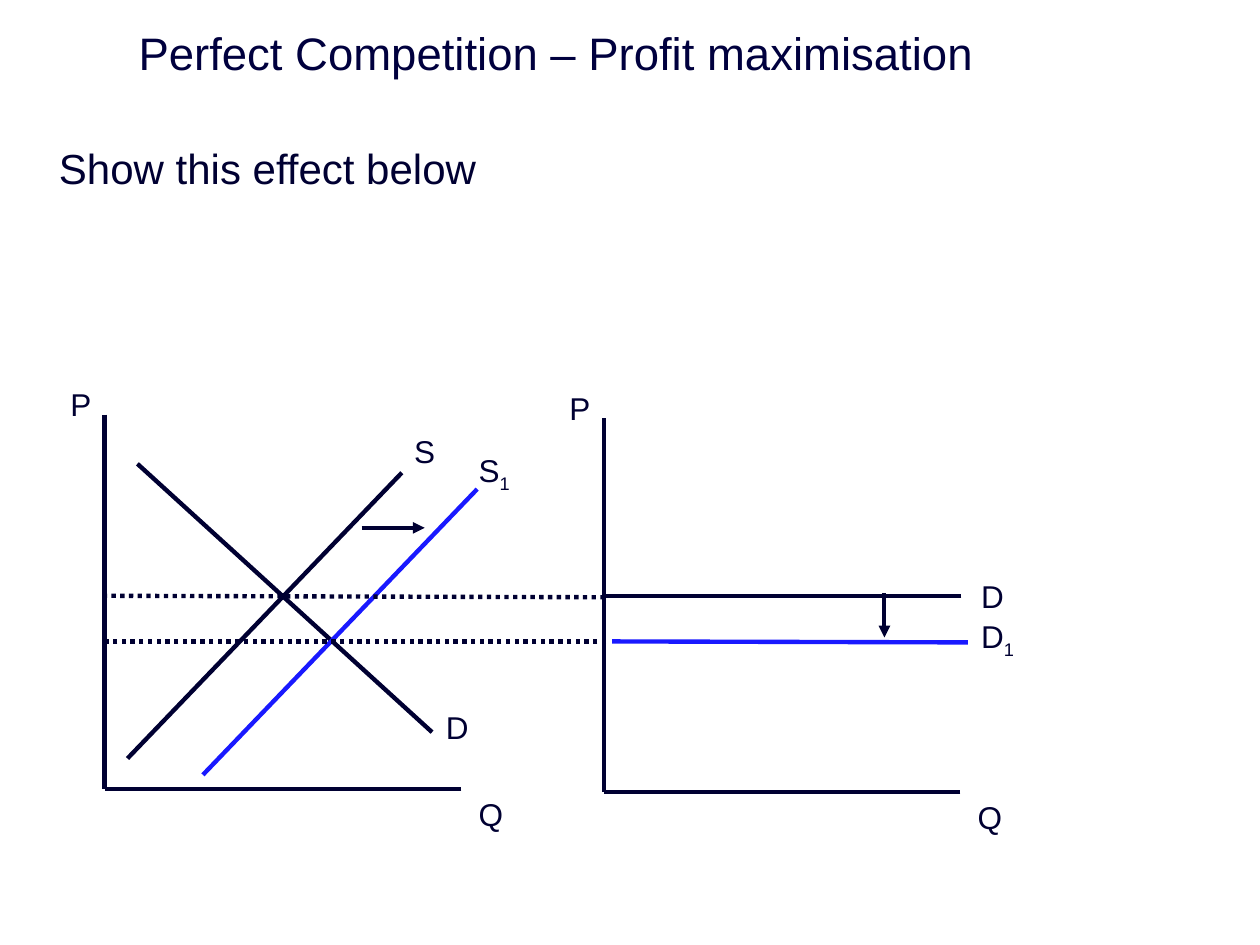
"""Build a slide on profit maximisation: market supply shift and the firm's demand."""
from lxml.etree import SubElement
from pptx import Presentation
from pptx.dml.color import RGBColor
from pptx.enum.dml import MSO_LINE
from pptx.enum.shapes import MSO_CONNECTOR
from pptx.enum.text import MSO_ANCHOR, PP_ALIGN
from pptx.oxml.ns import qn
from pptx.util import Cm, Pt

TITLE_COLOUR = RGBColor(0x00, 0x00, 0x3E)
INK = RGBColor(0x00, 0x00, 0x32)
BLUE = RGBColor(0x19, 0x19, 0xFF)

TITLE = "Perfect Competition – Profit maximisation"
INSTRUCTION = "Show this effect below"
ORIGINS = [(2.11, 15.9), (12.17, 15.97)]
AXIS_WIDTH, AXIS_HEIGHT = 7.19, 7.54
SUPPLY = (8.1, 9.53, 2.57, 15.29)
SUPPLY_SHIFT = (1.52, 0.33)
MARKET_DEMAND = (8.71, 14.76, 2.77, 9.35)
FIRM_DEMAND = (19.38, 12.01, 12.22, 12.01)
NEW_FIRM_DEMAND = (19.51, 12.95, 12.34, 12.93)
PRICES = [(12.19, 12.04, 2.06, 12.01), (12.22, 12.93, 2.11, 12.93)]
SHIFT_ARROWS = [(17.83, 11.96, 17.83, 12.85), (7.29, 10.64, 8.56, 10.64)]
CURVE_LABELS = [
    ("S", "", 8.1, 8.59),
    ("S", "1", 9.4, 8.97),
    ("D", "", 8.74, 14.15),
    ("D", "", 19.53, 11.51),
    ("D", "1", 19.53, 12.32),
]


def add_run(paragraph, text, size, colour):
    run = paragraph.add_run()
    run.text = text
    run.font.name = "Arial"
    run.font.size = Pt(size)
    run.font.color.rgb = colour
    return run


def add_text(slide, text, left, top, width, height, size):
    shape = slide.shapes.add_textbox(Cm(left), Cm(top), Cm(width), Cm(height))
    shape.text_frame.word_wrap = True
    paragraph = shape.text_frame.paragraphs[0]
    add_run(paragraph, text, size, INK)
    return paragraph


def add_label(slide, text, subscript, left, top):
    paragraph = add_text(slide, text, left, top, 1.6, 1.03, 18)
    if subscript:
        run = add_run(paragraph, subscript, 18, INK)
        run.font._element.set("baseline", "-25000")


def add_line(slide, ends, colour=INK, width=2.5, dotted=False, arrow=False):
    connector = slide.shapes.add_connector(
        MSO_CONNECTOR.STRAIGHT, *(Cm(value) for value in ends)
    )
    connector.line.color.rgb = colour
    connector.line.width = Pt(width)
    if dotted:
        connector.line.dash_style = MSO_LINE.ROUND_DOT
    properties = connector._element.spPr
    if arrow:
        SubElement(properties.find(qn("a:ln")), qn("a:tailEnd"), type="triangle")
    SubElement(properties, qn("a:effectLst"))


def add_axes(slide, left, bottom):
    add_line(slide, (left, bottom - AXIS_HEIGHT, left, bottom))
    add_line(slide, (left + AXIS_WIDTH, bottom, left, bottom))
    add_label(slide, "Q", "", left + 7.29, bottom)
    add_label(slide, "P", "", left - 0.94, bottom - 8.26)


def main():
    presentation = Presentation()
    presentation.slide_width, presentation.slide_height = Cm(25.4), Cm(19.05)
    slide = presentation.slides.add_slide(presentation.slide_layouts[5])

    title = slide.shapes.title
    title.left, title.top, title.width, title.height = Cm(2.54), Cm(0.41), Cm(22.86), Cm(1.3)
    title.text_frame.vertical_anchor = MSO_ANCHOR.MIDDLE
    paragraph = title.text_frame.paragraphs[0]
    paragraph.alignment = PP_ALIGN.LEFT
    add_run(paragraph, TITLE, 26, TITLE_COLOUR)
    add_text(slide, INSTRUCTION, 0.94, 2.75, 22.43, 1.3, 24)

    for left, bottom in ORIGINS:
        add_axes(slide, left, bottom)
    for curve in (SUPPLY, MARKET_DEMAND, FIRM_DEMAND):
        add_line(slide, curve)
    new_supply = [value + shift for value, shift in zip(SUPPLY, SUPPLY_SHIFT * 2)]
    for curve in (new_supply, NEW_FIRM_DEMAND):
        add_line(slide, curve, BLUE)
    for price in PRICES:
        add_line(slide, price, dotted=True)
    for shift_arrow in SHIFT_ARROWS:
        add_line(slide, shift_arrow, width=2.25, arrow=True)
    for label in CURVE_LABELS:
        add_label(slide, *label)

    presentation.save("out.pptx")


if __name__ == "__main__":
    main()
